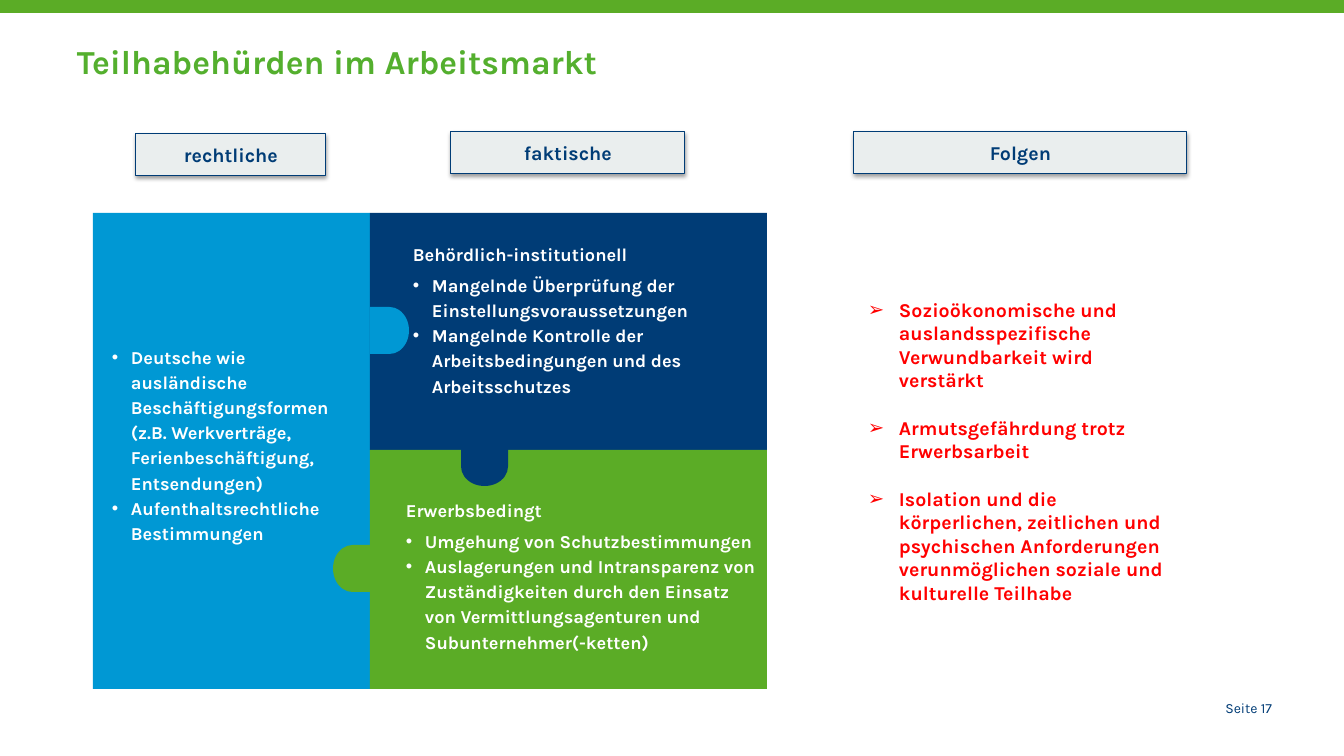
"""Build the slide on barriers to participation in the labour market."""
from lxml.etree import SubElement
from pptx import Presentation
from pptx.dml.color import RGBColor
from pptx.enum.shapes import MSO_SHAPE as Shape
from pptx.enum.text import MSO_ANCHOR as Anchor, PP_ALIGN as Align
from pptx.oxml import parse_xml
from pptx.oxml.ns import nsdecls, qn
from pptx.util import Pt

GREEN = RGBColor(0x5B, 0xAC, 0x26)
TITLE_GREEN = RGBColor(0x54, 0xAF, 0x2E)
NAVY = RGBColor(0x00, 0x3C, 0x76)
BLUE = RGBColor(0x00, 0x98, 0xD4)
GREY = RGBColor(0xEA, 0xEE, 0xEE)
RED = RGBColor(0xFF, 0x00, 0x00)
WHITE = RGBColor(0xFF, 0xFF, 0xFF)

TITLE = "Teilhabehürden im Arbeitsmarkt"
PAGE = "Seite 17"
HEADERS = [
    ("rechtliche", (136, 134, 190, 42)),
    ("faktische", (451, 132, 234, 42)),
    ("Folgen", (854, 132, 333, 42)),
]
BARRIERS = [
    (None, [
        "Deutsche wie ausländische Beschäftigungsformen "
        "(z.B. Werkverträge, Ferienbeschäftigung, Entsendungen)",
        "Aufenthaltsrechtliche Bestimmungen",
    ], (112, 235, 255, 417), (0, 10)),
    ("Behördlich-institutionell", [
        "Mangelnde Überprüfung der Einstellungsvoraussetzungen",
        "Mangelnde Kontrolle der Arbeitsbedingungen und des Arbeitsschutzes",
    ], (409, 212, 349, 213), (4, 4)),
    ("Erwerbsbedingt", [
        "Umgehung von Schutzbestimmungen",
        "Auslagerungen und Intransparenz von Zuständigkeiten durch den "
        "Einsatz von Vermittlungsagenturen und Subunternehmer(-ketten)",
    ], (402, 493, 357, 163), (4, 4)),
]
CONSEQUENCES = [
    "Sozioökonomische und auslandsspezifische Verwundbarkeit wird verstärkt",
    "Armutsgefährdung trotz Erwerbsarbeit",
    "Isolation und die körperlichen, zeitlichen und psychischen Anforderungen "
    "verunmöglichen soziale und kulturelle Teilhabe",
]

PX = 914400 / 100.8
SLIDE_W, SLIDE_H = 1344, 756
LEFT, MIDDLE, RIGHT = 93, 370, 767
TOP, SPLIT, BOTTOM = 213, 450, 689
KNOB_W, KNOB_H = 39, 47
PIECES = [
    ((LEFT, TOP, MIDDLE, BOTTOM), BLUE),
    ((MIDDLE, TOP, RIGHT, SPLIT), NAVY),
    ((MIDDLE, SPLIT, RIGHT, BOTTOM), GREEN),
]
KNOBS = [
    (MIDDLE - KNOB_W + 2, 545, 180, GREEN),
    (MIDDLE, 307, 0, BLUE),
    (465, 443, 90, NAVY),
]

HEADER_FONT = {"size": Pt(14), "bold": True}
BARRIER_FONT = {"size": Pt(13), "bold": True}
TITLE_FONT = {"size": Pt(24), "bold": True}
PAGE_FONT = {"size": Pt(10), "bold": False}


def emu(*lengths):
    return [round(length * PX) for length in lengths]


def apply(target, values):
    for name, value in values.items():
        setattr(target, name, value)


def add_block(slide, kind, box, fill, rotation=0):
    block = slide.shapes.add_shape(kind, *emu(*box))
    block.shadow.inherit = False
    block.fill.solid()
    block.fill.fore_color.rgb = fill
    block.line.fill.background()
    block.rotation = rotation
    return block


def add_text_box(slide, box, anchor=Anchor.TOP, sides=(10, 10)):
    frame = slide.shapes.add_textbox(*emu(*box)).text_frame
    left, right, edge = emu(*sides, 5)
    apply(frame, {"word_wrap": True, "vertical_anchor": anchor,
                  "margin_left": left, "margin_right": right,
                  "margin_top": edge, "margin_bottom": edge})
    return frame


def write(frame, text, font, color, bullet=None, indent=0, **layout):
    paragraph = frame.paragraphs[0]
    if paragraph.runs:
        paragraph = frame.add_paragraph()
    run = paragraph.add_run()
    run.text = text
    apply(run.font, {"name": "Karla", **font})
    run.font.color.rgb = color
    apply(paragraph, {"alignment": Align.LEFT, **layout})
    if bullet:
        properties = paragraph._p.get_or_add_pPr()
        hang = emu(indent)[0]
        properties.set("marL", str(hang))
        properties.set("indent", str(-hang))
        SubElement(properties, qn("a:buFont"), typeface="Arial")
        SubElement(properties, qn("a:buChar"), char=bullet)


def add_header(slide, label, box):
    header = add_block(slide, Shape.RECTANGLE, box, GREY)
    header.line.color.rgb = NAVY
    header.line.width = Pt(0.75)
    properties = header._element.spPr
    properties.remove(properties.find(qn("a:effectLst")))
    properties.append(parse_xml(
        f'<a:effectLst {nsdecls("a")}>'
        f'<a:outerShdw blurRad="{Pt(3.1)}" dist="{Pt(1.6)}" dir="5400000" rotWithShape="0">'
        '<a:srgbClr val="000000"><a:alpha val="38000"/></a:srgbClr>'
        '</a:outerShdw></a:effectLst>'))
    header.text_frame.vertical_anchor = Anchor.MIDDLE
    write(header.text_frame, label, HEADER_FONT, NAVY, alignment=Align.CENTER)


def main():
    deck = Presentation()
    deck.slide_width, deck.slide_height = emu(SLIDE_W, SLIDE_H)
    slide = deck.slides.add_slide(deck.slide_layouts[6])

    add_block(slide, Shape.RECTANGLE, (0, 0, SLIDE_W, 13), GREEN)
    write(add_text_box(slide, (67, 30, 1210, 60)), TITLE, TITLE_FONT, TITLE_GREEN,
          line_spacing=1.14)
    write(add_text_box(slide, (1143, 695, 139, 27)), PAGE, PAGE_FONT, NAVY,
          alignment=Align.RIGHT)

    for label, box in HEADERS:
        add_header(slide, label, box)

    for (left, top, right, bottom), color in PIECES:
        add_block(slide, Shape.RECTANGLE, (left, top, right - left, bottom - top), color)
    for left, top, rotation, color in KNOBS:
        add_block(slide, Shape.FLOWCHART_DELAY, (left, top, KNOB_W, KNOB_H), color, rotation)

    for heading, points, box, sides in BARRIERS:
        frame = add_text_box(slide, box, Anchor.MIDDLE, sides)
        if heading:
            write(frame, heading, BARRIER_FONT, WHITE, line_spacing=1.15, space_after=Pt(4))
        for point in points:
            write(frame, point, BARRIER_FONT, WHITE, "•", 19, line_spacing=1.15)

    consequences = add_text_box(slide, (858, TOP, 333, BOTTOM - TOP), Anchor.MIDDLE)
    for number, consequence in enumerate(CONSEQUENCES):
        write(consequences, consequence, HEADER_FONT, RED, "➢", 31,
              space_before=Pt(17 if number else 0))

    deck.save("out.pptx")


if __name__ == "__main__":
    main()
